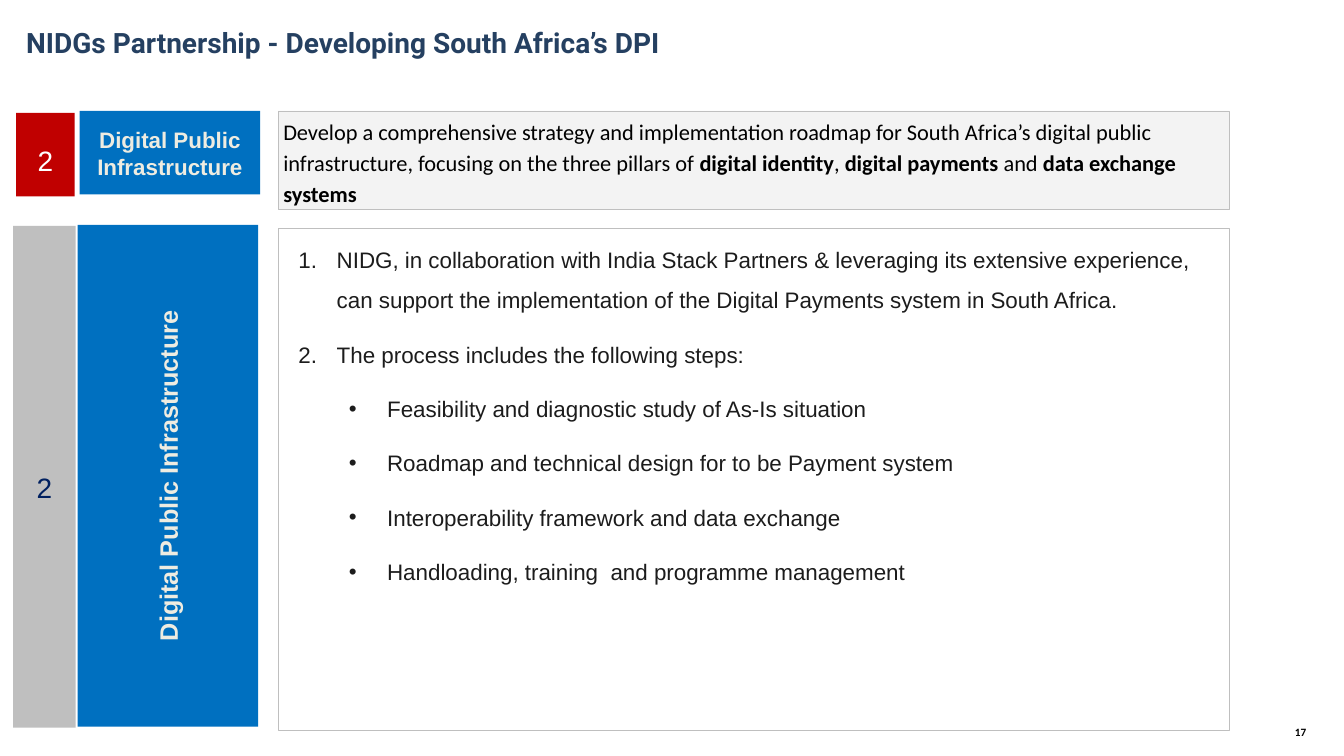
"""Build the Digital Public Infrastructure partnership slide."""
from dataclasses import dataclass
from typing import Optional

from lxml.etree import SubElement
from pptx import Presentation
from pptx.dml.color import RGBColor
from pptx.enum.shapes import MSO_SHAPE
from pptx.enum.text import MSO_ANCHOR as Anchor, MSO_AUTO_SIZE as AutoSize, PP_ALIGN as Align
from pptx.oxml.ns import qn
from pptx.util import Inches, Pt


@dataclass(frozen=True)
class Theme:
    blue: str = "0070C0"
    red: str = "C00000"
    grey: str = "BFBFBF"
    pale: str = "F3F3F3"
    cream: str = "EEECE1"
    white: str = "FFFFFF"
    navy: str = "002060"
    heading: str = "254061"
    ink: str = "1C1C1C"
    black: str = "000000"
    title_size: int = 20
    number_size: int = 20
    side_size: int = 18
    text_size: int = 16
    page_size: int = 8


@dataclass(frozen=True)
class Box:
    left: float
    top: float
    width: float
    height: float


@dataclass(frozen=True)
class Panel:
    text: str
    box: Box
    fill: str
    color: str
    size: int
    bold: bool = False
    top_inset: float = 0.1
    vertical: bool = False


@dataclass(frozen=True)
class ListItem:
    text: str
    level: int = 0


THEME = Theme()
TITLE = "NIDGs Partnership - Developing South Africa’s DPI"
TITLE_BOX = Box(0.16, 0.01, 12.76, 0.81)
SUMMARY_BOX = Box(2.76, 1.1, 9.43, 0.98)
LIST_BOX = Box(2.76, 2.26, 9.43, 4.98)
PAGE_BOX = Box(12.68, 7.12, 0.44, 0.29)
TOPIC = "Digital Public Infrastructure"
PANELS = [
    Panel(TOPIC, Box(0.79, 1.1, 1.79, 0.83), THEME.blue, THEME.cream, THEME.text_size, bold=True),
    Panel("2", Box(0.16, 1.12, 0.58, 0.83), THEME.red, THEME.white, THEME.number_size, top_inset=0.22),
    Panel(TOPIC, Box(0.77, 2.23, 1.79, 4.98), THEME.blue, THEME.cream, THEME.side_size,
          bold=True, vertical=True),
    Panel("2", Box(0.13, 2.24, 0.62, 4.98), THEME.grey, THEME.navy, THEME.number_size, top_inset=0.3),
]
SUMMARY = [
    ("Develop a comprehensive strategy and implementation roadmap for South Africa’s digital public "
     "infrastructure, focusing on the three pillars of ", False),
    ("digital identity", True),
    (", ", False),
    ("digital payments ", True),
    ("and ", False),
    ("data exchange systems", True),
]
ITEMS = [
    ListItem("NIDG, in collaboration with India Stack Partners & leveraging its extensive experience, "
             "can support the implementation of the Digital Payments system in South Africa."),
    ListItem("The process includes the following steps:"),
    ListItem("Feasibility and diagnostic study of As-Is situation", 1),
    ListItem("Roadmap and technical design for to be Payment system", 1),
    ListItem("Interoperability framework and data exchange", 1),
    ListItem("Handloading, training  and programme management", 1),
]


def rgb(color: str) -> RGBColor:
    """Convert a hex colour."""
    return RGBColor.from_string(color)


def place(shape, box: Box) -> None:
    """Move and size a shape."""
    shape.left, shape.top = Inches(box.left), Inches(box.top)
    shape.width, shape.height = Inches(box.width), Inches(box.height)


def set_frame(frame, inset: float, anchor=Anchor.MIDDLE, top_inset: Optional[float] = None) -> None:
    """Set wrapping, anchor and margins of a text frame."""
    frame.word_wrap = True
    frame.auto_size = AutoSize.NONE
    frame.vertical_anchor = anchor
    frame.margin_left = frame.margin_right = frame.margin_bottom = Inches(inset)
    frame.margin_top = Inches(inset if top_inset is None else top_inset)


def format_runs(paragraph, name: str, size: int, color: str, bold: bool = False) -> None:
    """Format every run of a paragraph."""
    for run in paragraph.runs:
        run.font.name, run.font.size, run.font.bold = name, Pt(size), bold
        run.font.color.rgb = rgb(color)


def set_outline(shape) -> None:
    """Give a shape the thin grey outline."""
    shape.line.color.rgb = rgb(THEME.grey)
    shape.line.width = Pt(0.25)


def add_rectangle(slide, box: Box, fill: str):
    """Add a filled rectangle without shadow or line."""
    shape = slide.shapes.add_shape(MSO_SHAPE.RECTANGLE, 0, 0, 0, 0)
    place(shape, box)
    shape.shadow.inherit = False
    shape.fill.solid()
    shape.fill.fore_color.rgb = rgb(fill)
    shape.line.fill.background()
    return shape


def add_panel(slide, panel: Panel) -> None:
    """Add a coloured panel with a centred label."""
    frame = add_rectangle(slide, panel.box, panel.fill).text_frame
    set_frame(frame, 0.1, top_inset=panel.top_inset)
    if panel.vertical:
        frame._txBody.bodyPr.set("vert", "vert270")
    frame.text = panel.text
    paragraph = frame.paragraphs[0]
    paragraph.alignment = Align.CENTER
    format_runs(paragraph, "Arial", panel.size, panel.color, panel.bold)


def add_summary(slide) -> None:
    """Add the summary box with its bold terms."""
    shape = add_rectangle(slide, SUMMARY_BOX, THEME.pale)
    set_outline(shape)
    set_frame(shape.text_frame, 0.05)
    paragraph = shape.text_frame.paragraphs[0]
    paragraph.alignment = Align.LEFT
    paragraph.line_spacing = 1.15
    for text, _ in SUMMARY:
        paragraph.add_run().text = text
    format_runs(paragraph, "Calibri", THEME.text_size, THEME.black)
    for run, (_, bold) in zip(paragraph.runs, SUMMARY):
        run.font.bold = bold


def set_bullet(paragraph, level: int) -> None:
    """Number the first level and dot the second."""
    properties = paragraph._p.get_or_add_pPr()
    properties.set("marL", str(Inches(0.53 + 0.5 * level)))
    properties.set("indent", str(Inches(-0.38)))
    SubElement(properties, qn("a:buFont"), typeface="Arial")
    if level:
        SubElement(properties, qn("a:buChar"), char="•")
    else:
        SubElement(properties, qn("a:buAutoNum"), type="arabicPeriod")


def fill_list(body) -> None:
    """Write the list into the body placeholder."""
    place(body, LIST_BOX)
    set_outline(body)
    frame = body.text_frame
    set_frame(frame, 0.05, Anchor.TOP)
    frame.text = "\n".join(item.text for item in ITEMS)
    for paragraph, item in zip(frame.paragraphs, ITEMS):
        paragraph.level = item.level
        set_bullet(paragraph, item.level)
        paragraph.line_spacing = 1.5
        paragraph.space_before, paragraph.space_after = Pt(0), Pt(10)
        format_runs(paragraph, "Arial", THEME.text_size, THEME.ink)


def add_line(shape, box: Box, text: str, align, name: str, size: int, color: str) -> None:
    """Place a shape and write one bold line in it."""
    place(shape, box)
    set_frame(shape.text_frame, 0.1, top_inset=0.05)
    shape.text_frame.margin_bottom = Inches(0.05)
    shape.text_frame.text = text
    paragraph = shape.text_frame.paragraphs[0]
    paragraph.alignment = align
    format_runs(paragraph, name, size, color, True)


def main() -> None:
    """Build and save the presentation."""
    presentation = Presentation()
    presentation.slide_width, presentation.slide_height = Inches(13.33), Inches(7.5)
    slide = presentation.slides.add_slide(presentation.slide_layouts[1])
    add_line(slide.shapes.title, TITLE_BOX, TITLE, Align.LEFT, "Roboto", THEME.title_size, THEME.heading)
    fill_list(slide.placeholders[1])
    for panel in PANELS:
        add_panel(slide, panel)
    add_summary(slide)
    page = slide.shapes.add_textbox(0, 0, 0, 0)
    add_line(page, PAGE_BOX, "17", Align.CENTER, "Calibri", THEME.page_size, THEME.black)
    presentation.save("out.pptx")


if __name__ == "__main__":
    main()
